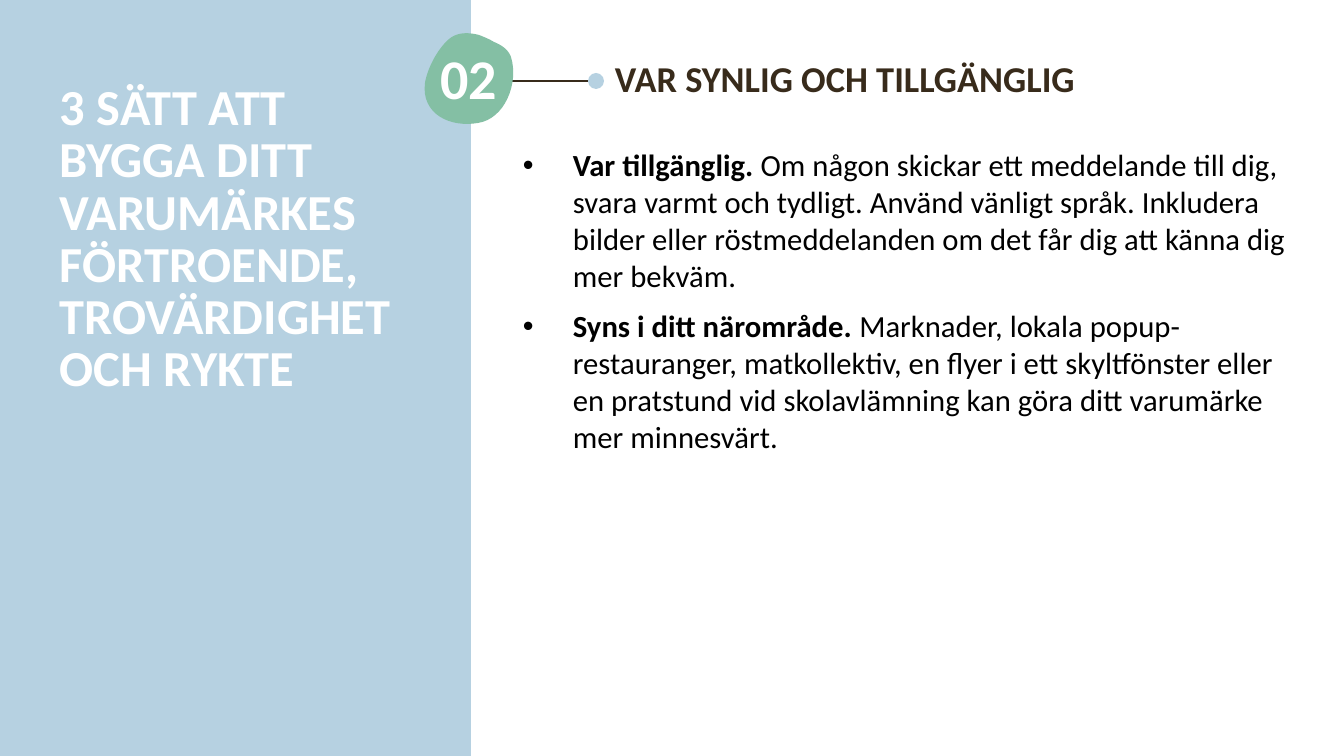
from lxml.etree import SubElement
from pptx import Presentation
from pptx.dml.color import RGBColor
from pptx.enum.shapes import MSO_CONNECTOR, MSO_SHAPE
from pptx.enum.text import PP_ALIGN
from pptx.oxml.ns import qn
from pptx.util import Pt

# Content
TITLE = "3 SÄTT ATT BYGGA DITT VARUMÄRKES FÖRTROENDE, TROVÄRDIGHET OCH RYKTE"
NUMBER = "02"
HEADING = "VAR SYNLIG OCH TILLGÄNGLIG"
ADVICE = [
    ("Var tillgänglig. ",
     "Om någon skickar ett meddelande till dig, svara varmt och tydligt. "
     "Använd vänligt språk. Inkludera bilder eller röstmeddelanden om det "
     "får dig att känna dig mer bekväm."),
    ("Syns i ditt närområde. ",
     "Marknader, lokala popup-restauranger, matkollektiv, en flyer i ett "
     "skyltfönster eller en pratstund vid skolavlämning kan göra ditt "
     "varumärke mer minnesvärt."),
]
COLORS = {"sky": "B6D1E1", "green": "84BFA4", "brown": "382B1B",
          "white": "FFFFFF", "black": "000000"}
FONT = "Calibri"

# Layout in px
PX = 914400 / 100.8
WIDTH, HEIGHT = 1344, 756
PANEL_WIDTH = 471
MARKER_Y = 81
DOT_LEFT, DOT_SIZE = 588, 16
HANGING = 50
BADGE_START = (479, 35)
BADGE_CURVES = [
    ((467, 32), (455, 32), (446, 42)),
    ((436, 52), (427, 70), (425, 83)),
    ((421, 114), (450, 128), (478, 123)),
    ((505, 119), (519, 83), (511, 57)),
    ((508, 49), (501, 45), (494, 42)),
    ((489, 39), (484, 37), BADGE_START),
]
CURVE_STEPS = 16


def px(value):
    return round(value * PX)


def rgb(name):
    return RGBColor.from_string(COLORS[name])


def paint(shape, color):
    shape.shadow.inherit = False
    shape.fill.solid()
    shape.fill.fore_color.rgb = rgb(color)
    shape.line.fill.background()


def add_preset(kind, left, top, width, height, color):
    paint(slide.shapes.add_shape(kind, *map(px, (left, top, width, height))), color)


def bezier(start, control_1, control_2, end):
    for step in range(1, CURVE_STEPS + 1):
        t = step / CURVE_STEPS
        weights = ((1 - t) ** 3, 3 * t * (1 - t) ** 2, 3 * t ** 2 * (1 - t), t ** 3)
        yield tuple(px(sum(w * c for w, c in zip(weights, axis)))
                    for axis in zip(start, control_1, control_2, end))


def add_text(paragraphs, left, top, width, height, *, size, color,
             align=PP_ALIGN.LEFT, line_spacing=None, space_before=0, bullet=False):
    """Each paragraph is a sequence of runs; the first run is bold."""
    frame = slide.shapes.add_textbox(*map(px, (left, top, width, height))).text_frame
    frame.word_wrap = True
    for index, runs in enumerate(paragraphs):
        paragraph = frame.add_paragraph() if index else frame.paragraphs[0]
        if bullet:
            properties = paragraph._p.get_or_add_pPr()
            properties.set("marL", str(px(HANGING)))
            properties.set("indent", str(-px(HANGING)))
            SubElement(properties, qn("a:buFont")).set("typeface", "Arial")
            SubElement(properties, qn("a:buChar")).set("char", "•")
        paragraph.alignment = align
        if line_spacing:
            paragraph.line_spacing = line_spacing
        if index:
            paragraph.space_before = Pt(space_before)
        for position, text in enumerate(runs):
            run = paragraph.add_run()
            run.text = text
            run.font.name = FONT
            run.font.size = Pt(size)
            run.font.bold = position == 0
            run.font.color.rgb = rgb(color)


presentation = Presentation()
presentation.slide_width, presentation.slide_height = px(WIDTH), px(HEIGHT)
slide = presentation.slides.add_slide(presentation.slide_layouts[6])

# Side panel
add_preset(MSO_SHAPE.RECTANGLE, 0, 0, PANEL_WIDTH, HEIGHT, "sky")

# Line and dot between number and heading
leader = slide.shapes.add_connector(
    MSO_CONNECTOR.STRAIGHT, px(592), px(MARKER_Y), px(459), px(MARKER_Y))
leader.line.color.rgb = rgb("brown")
leader.line.width = Pt(1.5)
SubElement(leader._element.spPr, qn("a:effectLst"))
add_preset(MSO_SHAPE.OVAL, DOT_LEFT, MARKER_Y - DOT_SIZE / 2, DOT_SIZE, DOT_SIZE, "sky")

# Number badge
badge = slide.shapes.build_freeform(*map(px, BADGE_START))
curve_start = BADGE_START
for curve in BADGE_CURVES:
    badge.add_line_segments(list(bezier(curve_start, *curve)), close=False)
    curve_start = curve[-1]
badge.add_line_segments([], close=True)
paint(badge.convert_to_shape(), "green")
add_text([[NUMBER]], 419, 46, 99, 59, size=40, color="white",
         align=PP_ALIGN.CENTER, line_spacing=0.9)

# Heading, title and advice
add_text([[HEADING]], 605, 51, 672, 54, size=26, color="brown")
add_text([[TITLE]], 50, 79, 367, 227, size=36, color="white", line_spacing=Pt(37.2))
add_text(ADVICE, 513, 141, 808, 335, size=21.9, color="black",
         space_before=10, bullet=True)

presentation.save("out.pptx")
